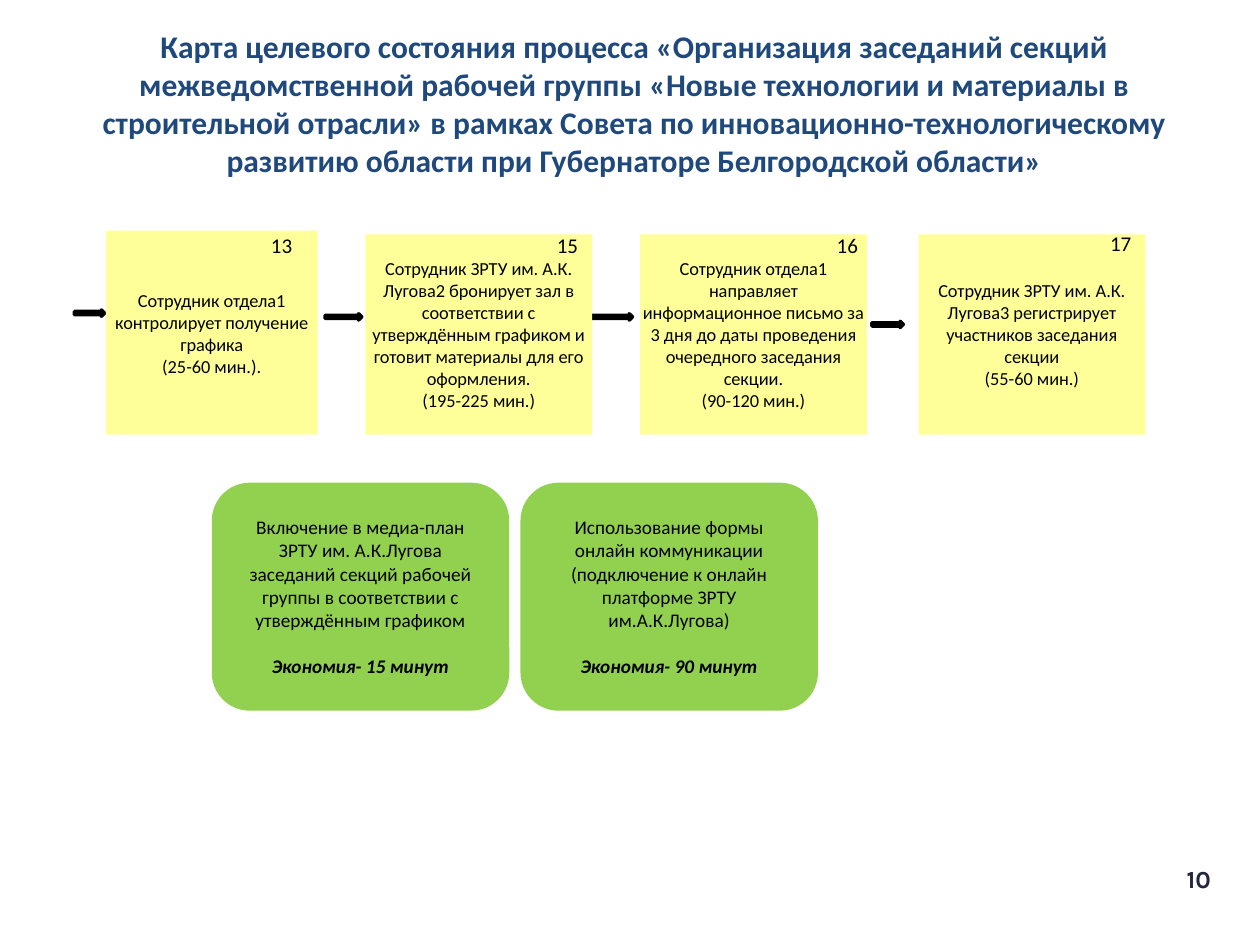
from pptx import Presentation
from pptx.dml.color import RGBColor
from pptx.enum.shapes import MSO_SHAPE
from pptx.enum.text import MSO_ANCHOR, PP_ALIGN
from pptx.util import Pt

BLACK = RGBColor(0x00, 0x00, 0x00)
NAVY = RGBColor(0x1F, 0x49, 0x7D)
BLUE = RGBColor(0x4F, 0x81, 0xBD)
YELLOW = RGBColor(0xFF, 0xFF, 0x99)
GREEN = RGBColor(0x92, 0xD0, 0x50)
INK = RGBColor(0x23, 0x26, 0x3C)

TITLE = (
    "Карта целевого состояния процесса «Организация заседаний секций "
    "межведомственной рабочей группы «Новые технологии и материалы в "
    "строительной отрасли» в рамках Совета по инновационно-технологическому "
    "развитию области при Губернаторе Белгородской области»"
)
PAGE_NUMBER = "10"

STEPS = [
    {"box": (60.5, 131.8, 121, 116.6), "number": "13", "number_at": (154.8, 132.8),
     "text": "Сотрудник отдела1 контролирует получение графика",
     "time": "(25-60 мин.)."},
    {"box": (208.8, 133.9, 129.6, 114.5), "number": "15", "number_at": (318.2, 132.8),
     "text": "Сотрудник ЗРТУ им. А.К. Лугова2 бронирует зал в соответствии с "
             "утверждённым графиком и готовит материалы для его оформления.",
     "time": "(195-225 мин.)"},
    {"box": (365.8, 133.9, 129.6, 114.5), "number": "16", "number_at": (478.1, 132.8),
     "text": "Сотрудник отдела1 направляет информационное письмо за 3 дня до "
             "даты проведения очередного заседания секции.",
     "time": "(90-120 мин.)"},
    {"box": (524.9, 133.9, 129.6, 114.5), "number": "17", "number_at": (634.3, 131.8),
     "text": "Сотрудник ЗРТУ им. А.К. Лугова3 регистрирует участников заседания секции",
     "time": "(55-60 мин.)"},
]
ARROWS = [(42.5, 177.1, 17.3), (185.8, 179.3, 20.9), (338.4, 179.3, 23), (498.2, 183.6, 18)]
ARROW_HEIGHT = 3.6

IMPROVEMENTS = [
    ("Включение в медиа-план ЗРТУ им. А.К.Лугова заседаний секций рабочей "
     "группы в соответствии с утверждённым графиком", "Экономия- 15 минут"),
    ("Использование формы онлайн коммуникации (подключение к онлайн "
     "платформе ЗРТУ им.А.К.Лугова)", "Экономия- 90 минут"),
]
IMPROVEMENT_LEFT, IMPROVEMENT_TOP = 121, 275.8
IMPROVEMENT_WIDTH, IMPROVEMENT_HEIGHT = 170, 130.3
IMPROVEMENT_PITCH = 176.4


def add_block(slide, kind, box, fill):
    shape = slide.shapes.add_shape(kind, *map(Pt, box))
    shape.shadow.inherit = False
    shape.fill.solid()
    shape.fill.fore_color.rgb = fill
    shape.line.fill.background()
    return shape


def add_label(slide, box):
    return slide.shapes.add_textbox(*map(Pt, box))


def write(shape, lines, size, color=BLACK, font="Calibri", bold=None,
          align=PP_ALIGN.CENTER, anchor=MSO_ANCHOR.MIDDLE, inset=None):
    frame = shape.text_frame
    frame.word_wrap = True
    frame.vertical_anchor = anchor
    if inset is not None:
        frame.margin_left = frame.margin_right = Pt(inset)
        frame.margin_top = frame.margin_bottom = Pt(inset)
    frame.text = "\n".join(lines)
    for paragraph in frame.paragraphs:
        paragraph.alignment = align
        paragraph.font.name = font
        paragraph.font.size = Pt(size)
        paragraph.font.color.rgb = color
        paragraph.font.bold = bold
    return frame


def main():
    presentation = Presentation()
    presentation.slide_width, presentation.slide_height = Pt(720), Pt(540)
    slide = presentation.slides.add_slide(presentation.slide_layouts[6])

    title = add_label(slide, (25.2, 25.9, 674.6, 89.3))
    write(title, [TITLE], 18, NAVY, bold=True).margin_bottom = Pt(27)

    for left, top, width in ARROWS:
        arrow = add_block(slide, MSO_SHAPE.RIGHT_ARROW,
                          (left, top, width, ARROW_HEIGHT), BLUE)
        arrow.line.color.rgb = BLACK
        arrow.line.width = Pt(2)

    for step in STEPS:
        block = add_block(slide, MSO_SHAPE.RECTANGLE, step["box"], YELLOW)
        write(block, [step["text"], step["time"]], 10.5, inset=0)
        number = add_label(slide, (*step["number_at"], 20.2, 14.6))
        write(number, [step["number"]], 12, align=PP_ALIGN.LEFT,
              anchor=MSO_ANCHOR.TOP, inset=0)

    for index, (text, saving) in enumerate(IMPROVEMENTS):
        left = IMPROVEMENT_LEFT + index * IMPROVEMENT_PITCH
        box = (left, IMPROVEMENT_TOP, IMPROVEMENT_WIDTH, IMPROVEMENT_HEIGHT)
        block = add_block(slide, MSO_SHAPE.ROUNDED_RECTANGLE, box, GREEN)
        saving_paragraph = write(block, [text, saving], 11).paragraphs[-1]
        saving_paragraph.space_before = Pt(13.4)
        saving_paragraph.font.bold = True
        saving_paragraph.font.italic = True

    page_label = add_label(slide, (662.4, 490.3, 45.4, 22.3))
    write(page_label, [PAGE_NUMBER], 14, INK, "Karla", True, anchor=MSO_ANCHOR.TOP)

    presentation.save("out.pptx")


if __name__ == "__main__":
    main()
